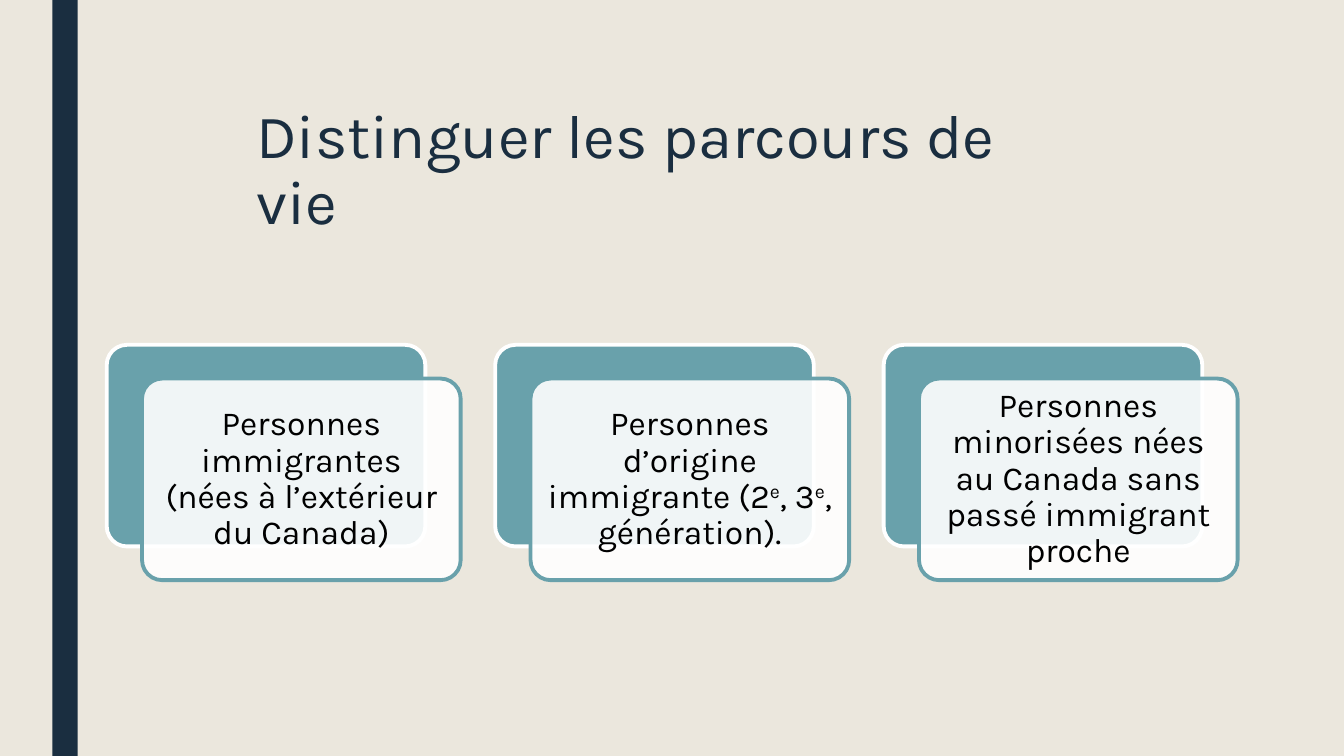
"""Build the slide that distinguishes three life paths."""
from dataclasses import dataclass

import lxml.etree
import pptx
import pptx.dml.color
import pptx.enum.shapes
import pptx.enum.text
import pptx.oxml.ns
import pptx.util
from pptx.util import Cm

COLORS = {
    "background": "EBE7DD",
    "navy": "1A2E40",
    "teal": "69A1AB",
    "white": "FFFFFF",
    "black": "000000",
}
FONT = "Karla"
CARD_LEFT, CARD_TOP, CARD_STEP = 2.69, 8.69, 9.79
CARD_WIDTH, CARD_HEIGHT = 8.03, 5.08
FRONT_SHIFT_X, FRONT_SHIFT_Y = 0.89, 0.85


@dataclass
class Segment:
    """A stretch of text, raised or not."""
    text: str
    superscript: bool = False


@dataclass
class Card:
    """One life path."""
    segments: list[Segment]


CARDS = [
    Card([Segment("Personnes immigrantes (nées à l’extérieur du Canada)")]),
    Card([
        Segment("Personnes d’origine immigrante (2"),
        Segment("e", True),
        Segment(", 3"),
        Segment("e", True),
        Segment(", génération)."),
    ]),
    Card([Segment("Personnes minorisées nées au Canada sans passé immigrant proche")]),
]


def color(name: str) -> pptx.dml.color.RGBColor:
    """Return a named colour."""
    return pptx.dml.color.RGBColor.from_string(COLORS[name])


def format_font(font, size: float, color_name: str) -> None:
    """Apply the slide font with a size and colour."""
    font.name = FONT
    font.size = pptx.util.Pt(size)
    font.color.rgb = color(color_name)


def add_title(slide, text: str) -> None:
    """Place and format the title placeholder."""
    title = slide.shapes.title
    title.left, title.top, title.width, title.height = Cm(6.2), Cm(2.67), Cm(21.46), Cm(3.3)
    frame = title.text_frame
    frame.text = text
    frame.word_wrap = True
    frame.vertical_anchor = pptx.enum.text.MSO_ANCHOR.MIDDLE
    paragraph = frame.paragraphs[0]
    paragraph.alignment = pptx.enum.text.PP_ALIGN.LEFT
    paragraph.line_spacing = 0.89
    format_font(paragraph.runs[0].font, 44, "navy")


def add_band(slide) -> None:
    """Draw the vertical band at the left edge."""
    band = slide.shapes.add_shape(
        pptx.enum.shapes.MSO_SHAPE.RECTANGLE, Cm(1.32), Cm(0), Cm(0.64), Cm(19.05))
    band.shadow.inherit = False
    band.fill.solid()
    band.fill.fore_color.rgb = color("navy")
    band.line.fill.background()


def add_panel(slide, left: float, top: float, fill: str, line: str):
    """Draw one rounded panel of a card."""
    panel = slide.shapes.add_shape(
        pptx.enum.shapes.MSO_SHAPE.ROUNDED_RECTANGLE,
        Cm(left), Cm(top), Cm(CARD_WIDTH), Cm(CARD_HEIGHT))
    panel.adjustments[0] = 0.1
    panel.shadow.inherit = False
    panel.fill.solid()
    panel.fill.fore_color.rgb = color(fill)
    panel.line.color.rgb = color(line)
    panel.line.width = pptx.util.Pt(2.75)
    return panel


def set_opacity(shape, percent: int) -> None:
    """Make a solid fill partly transparent."""
    solid_fill = shape._element.spPr.find(pptx.oxml.ns.qn("a:solidFill"))
    fill_color = solid_fill.find(pptx.oxml.ns.qn("a:srgbClr"))
    alpha = lxml.etree.SubElement(fill_color, pptx.oxml.ns.qn("a:alpha"))
    alpha.set("val", str(percent * 1000))


def write_card_text(shape, segments: list[Segment]) -> None:
    """Write the centred text of a card."""
    frame = shape.text_frame
    frame.word_wrap = True
    frame.vertical_anchor = pptx.enum.text.MSO_ANCHOR.MIDDLE
    frame.margin_left = frame.margin_right = Cm(0.25)
    frame.margin_top = frame.margin_bottom = Cm(0.25)
    paragraph = frame.paragraphs[0]
    paragraph.alignment = pptx.enum.text.PP_ALIGN.CENTER
    paragraph.line_spacing = 0.9
    for segment in segments:
        run = paragraph.add_run()
        run.text = segment.text
        format_font(run.font, 24, "black")
        if segment.superscript:
            run._r.get_or_add_rPr().set("baseline", "30000")


def add_card(slide, index: int, card: Card) -> None:
    """Draw a card as a back panel and a shifted front panel."""
    left = CARD_LEFT + index * CARD_STEP
    add_panel(slide, left, CARD_TOP, "teal", "white")
    front = add_panel(
        slide, left + FRONT_SHIFT_X, CARD_TOP + FRONT_SHIFT_Y, "white", "teal")
    set_opacity(front, 90)
    write_card_text(front, card.segments)


def main() -> None:
    """Build and save the presentation."""
    presentation = pptx.Presentation()
    presentation.slide_width, presentation.slide_height = Cm(33.87), Cm(19.05)
    slide = presentation.slides.add_slide(presentation.slide_layouts.get_by_name("Title Only"))
    slide.background.fill.solid()
    slide.background.fill.fore_color.rgb = color("background")
    add_band(slide)
    add_title(slide, "Distinguer les parcours de vie")
    for index, card in enumerate(CARDS):
        add_card(slide, index, card)
    presentation.save("out.pptx")


if __name__ == "__main__":
    main()
